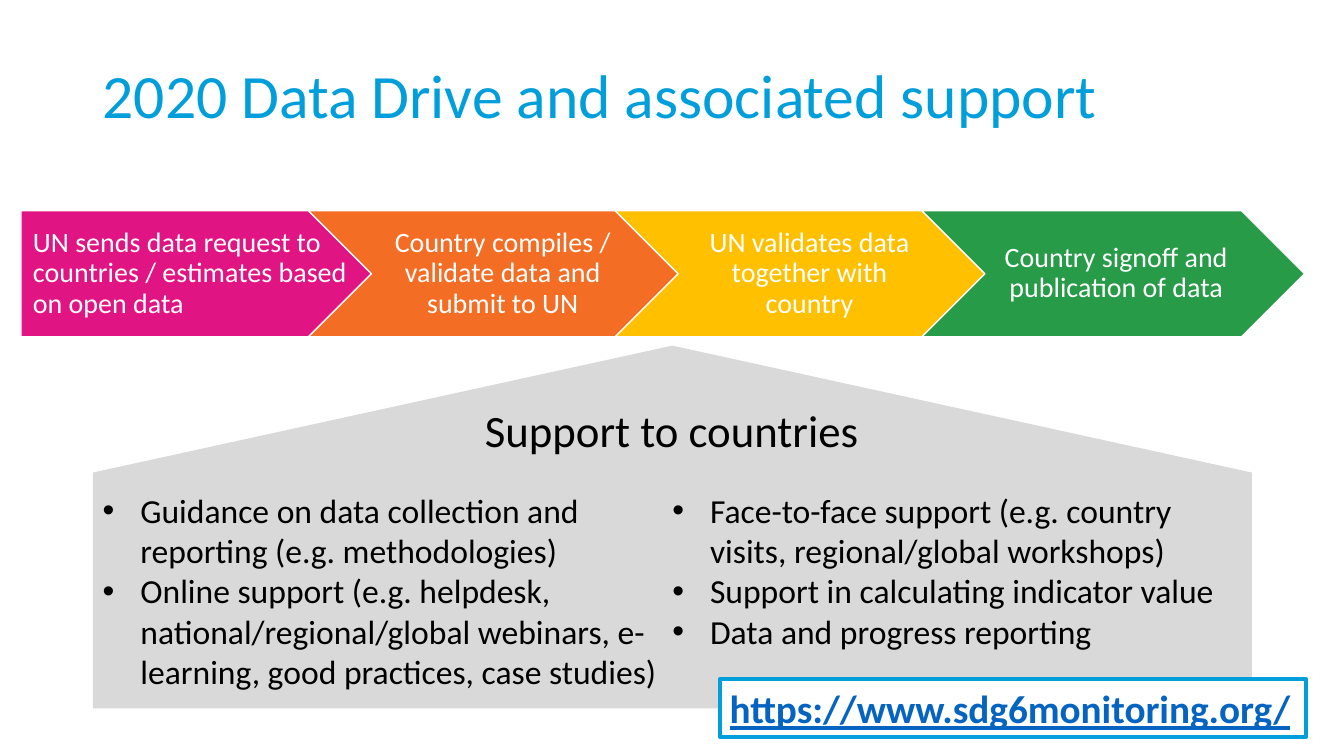
from dataclasses import dataclass

from lxml import etree
from pptx import Presentation
from pptx.dml.color import RGBColor
from pptx.enum import shapes, text
from pptx.oxml import ns
from pptx.util import Cm, Pt

SHAPE = shapes.MSO_SHAPE
ALIGN = text.PP_ALIGN
ANCHOR = text.MSO_ANCHOR


@dataclass(frozen=True)
class Theme:
    font: str = "Calibri"
    blue: str = "009EDB"
    link: str = "0563C1"
    white: str = "FFFFFF"
    black: str = "000000"
    grey: str = "D9D9D9"
    steps: tuple = ("E11484", "F36D25", "FFC000", "279B48")
    title_size: int = 44
    heading_size: int = 32
    link_size: int = 28
    body_size: int = 24
    step_size: int = 20


THEME = Theme()

STEPS = [
    "UN sends data request to countries / estimates based on open data",
    "Country compiles / validate data and submit to UN",
    "UN validates data together with country",
    "Country signoff and publication of data",
]
SUPPORT = [
    "Guidance on data collection and reporting (e.g. methodologies)",
    "Online support (e.g. helpdesk, national/regional/global webinars, "
    "e-learning, good practices, case studies)",
    "Face-to-face support (e.g. country visits, regional/global workshops)",
    "Support in calculating indicator value",
    "Data and progress reporting",
]


def add_bullet(p, indent):
    pPr = p._p.get_or_add_pPr()
    pPr.set("marL", str(indent))
    pPr.set("indent", str(-indent))
    etree.SubElement(pPr, ns.qn("a:buFont")).set("typeface", "Arial")
    etree.SubElement(pPr, ns.qn("a:buChar")).set("char", "•")


def write(s, lines, *, size, color=THEME.black, align=ALIGN.LEFT,
          anchor=ANCHOR.TOP, spacing=1.0, bold=False, underline=False,
          bullet=None, margins=(0.25, 0.13, 0.25, 0.13)):
    tf = s.text_frame
    tf.word_wrap = True
    tf.vertical_anchor = anchor
    (tf.margin_left, tf.margin_top,
     tf.margin_right, tf.margin_bottom) = map(Cm, margins)
    for i, line in enumerate(lines):
        p = tf.add_paragraph() if i else tf.paragraphs[0]
        p.alignment = align
        p.line_spacing = spacing
        if bullet:
            add_bullet(p, bullet)
        r = p.add_run()
        r.text = line
        r.font.name = THEME.font
        r.font.size = Pt(size)
        r.font.bold = bold
        r.font.underline = underline
        r.font.color.rgb = RGBColor.from_string(color)


def add_box(slide, left, top, width, height):
    return slide.shapes.add_textbox(Cm(left), Cm(top), Cm(width), Cm(height))


def add_shape(slide, kind, left, top, width, height, fill, line=None, weight=1):
    s = slide.shapes.add_shape(kind, Cm(left), Cm(top), Cm(width), Cm(height))
    s.shadow.inherit = False
    s.fill.solid()
    s.fill.fore_color.rgb = RGBColor.from_string(fill)
    if line:
        s.line.color.rgb = RGBColor.from_string(line)
        s.line.width = Pt(weight)
    else:
        s.line.fill.background()
    return s


def add_process(slide, left=0.53, top=5.31, height=3.18):
    first_chevron, pitch = 7.77, 7.73
    for i, (label, fill) in enumerate(zip(STEPS, THEME.steps)):
        if i == 0:
            kind, x, width = SHAPE.PENTAGON, left, 9.17
            text_x, text_width = left, 8.38
            align, inset = ALIGN.LEFT, 0.3
        else:
            kind, x, width = SHAPE.CHEVRON, first_chevron + (i - 1) * pitch, 9.65
            text_x, text_width = x + height / 2, width - height
            align, inset = ALIGN.CENTER, 0.23
        add_shape(slide, kind, x, top, width, height, fill, THEME.white)
        write(add_box(slide, text_x, top, text_width, height), [label],
              size=THEME.step_size, color=THEME.white, align=align,
              anchor=ANCHOR.MIDDLE, spacing=0.9,
              margins=(inset, 0.15, 0.08, 0.15))


def add_support(slide):
    s = add_shape(slide, SHAPE.UP_ARROW_CALLOUT, 2.34, 8.71, 29.21, 9.14,
                  THEME.grey)
    for i, value in enumerate((0.34, 1.6, 0.35, 0.65)):
        s.adjustments[i] = value
    write(s, SUPPORT, size=THEME.body_size, anchor=ANCHOR.MIDDLE,
          bullet=Cm(0.95))
    s.text_frame._txBody.bodyPr.set("numCol", "2")
    write(add_box(slide, 11.61, 10.03, 10.64, 1.63), ["Support to countries"],
          size=THEME.heading_size, align=ALIGN.CENTER)


def main():
    prs = Presentation()
    prs.slide_width, prs.slide_height = Cm(33.87), Cm(19.05)
    slide = prs.slides.add_slide(prs.slide_layouts[6])

    # Process arrows
    add_process(slide)

    # Support callout with its heading
    add_support(slide)

    # Title
    write(add_box(slide, 2.34, 1.02, 29.21, 2.95),
          ["2020 Data Drive and associated support"], size=THEME.title_size,
          color=THEME.blue, anchor=ANCHOR.MIDDLE, spacing=0.9)

    # Web address
    s = add_shape(slide, SHAPE.RECTANGLE, 18.14, 17.12, 14.78, 1.45,
                  THEME.white, THEME.blue, 3)
    write(s, ["https://www.sdg6monitoring.org/"], size=THEME.link_size,
          color=THEME.link, bold=True, underline=True)

    prs.save("out.pptx")


if __name__ == "__main__":
    main()
